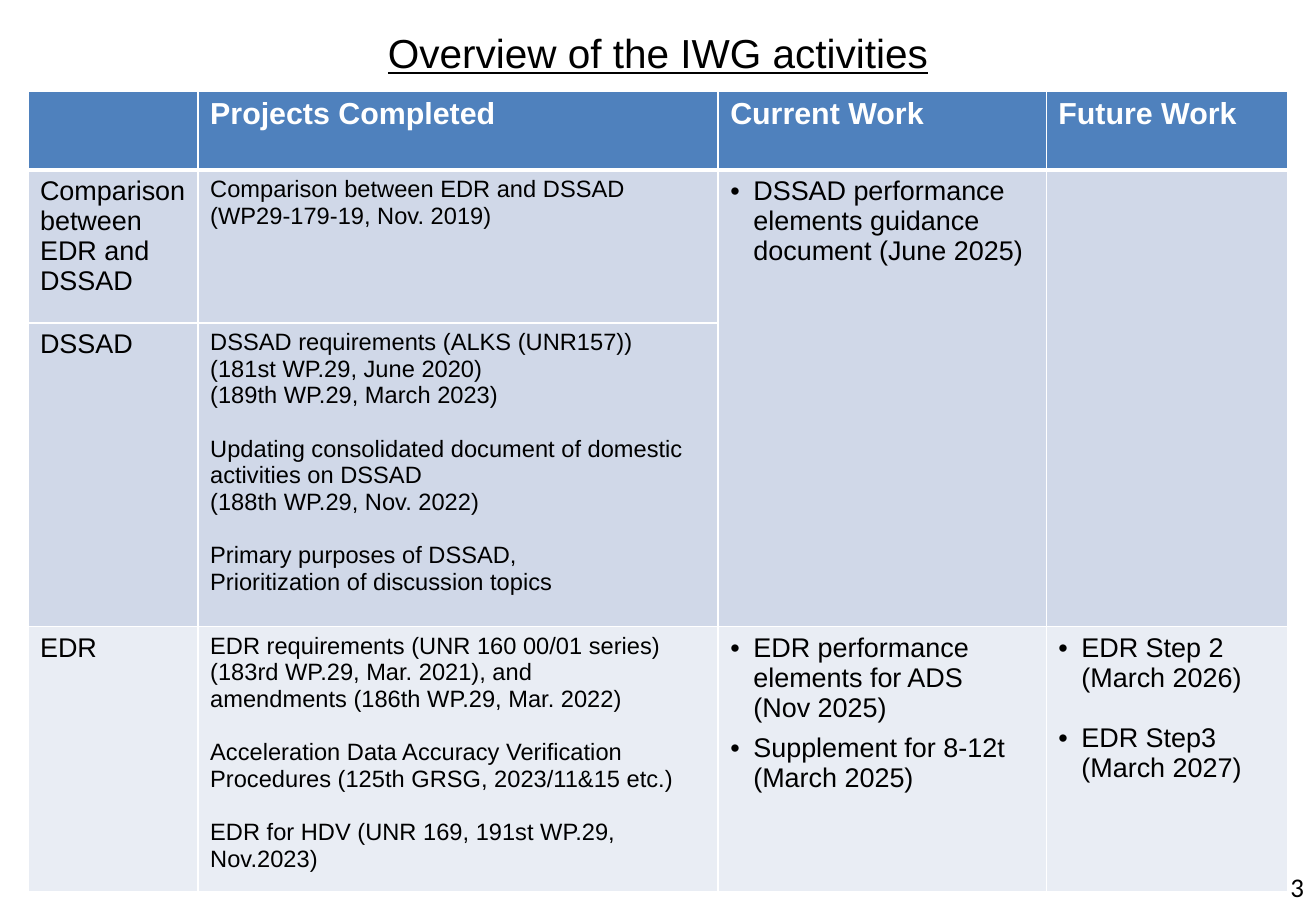
from lxml.etree import SubElement
from pptx import Presentation
from pptx.dml.color import RGBColor
from pptx.enum.text import MSO_ANCHOR, MSO_AUTO_SIZE, PP_ALIGN
from pptx.oxml.ns import qn
from pptx.util import Inches, Pt

WIDTH, HEIGHT = Inches(10.83), Inches(7.5)
COLS = [1.4, 4.28, 2.7, 1.99]
ROWS = [0.65, 1.26, 2.5, 2.12]
BLACK, WHITE, BLUE, MID, PALE = "000000", "FFFFFF", "4F81BD", "D0D8E8", "E9EDF4"
FILLS = [BLUE, MID, MID, PALE]

# Each paragraph is its text and the space before it in points
HEADS = ["", "Projects Completed", "Current Work", "Future Work"]
TOPICS = ["Comparison between EDR and DSSAD", "DSSAD", "EDR"]
DONE = [
    [("Comparison between EDR and DSSAD", 0),
     ("(WP29-179-19, Nov. 2019)", 0)],
    [("DSSAD requirements (ALKS (UNR157))\v(181st WP.29, June 2020)", 0),
     ("(189th WP.29, March 2023)", 0),
     ("Updating consolidated document of domestic activities on DSSAD", 16),
     ("(188th WP.29, Nov. 2022)", 0),
     ("Primary purposes of DSSAD,", 16),
     ("Prioritization of discussion topics", 0)],
    [("EDR requirements (UNR 160 00/01 series) (183rd WP.29, Mar. 2021), and"
      "\vamendments (186th WP.29, Mar. 2022)", 0),
     ("Acceleration Data Accuracy Verification Procedures "
      "(125th GRSG, 2023/11&15 etc.)", 16),
     ("EDR for HDV (UNR 169, 191st WP.29, Nov.2023)", 16)],
]
PLANS = {
    (1, 2): [("DSSAD performance elements guidance document (June 2025)", 0)],
    (3, 2): [("EDR performance elements for ADS\v(Nov 2025)", 0),
             ("Supplement for 8-12t (March 2025)", 6)],
    (3, 3): [("EDR Step 2\v(March 2026)", 0),
             ("EDR Step3\v(March 2027)", 18)],
}


def paint(item, color):
    """Give a fill, line or font one solid hex colour."""
    if hasattr(item, "solid"):
        item.solid()
        item.fore_color.rgb = RGBColor.from_string(color)
    else:
        item.color.rgb = RGBColor.from_string(color)


def style(para, size, color=BLACK, face="Arial", bold=False, line=False):
    for run in para.runs:
        font = run.font
        font.name, font.size, font.bold = face, Pt(size), bold
        font.underline = line
        paint(font, color)


def place(shape, left, top, width, height):
    """Set a shape's box as shares of the slide."""
    shape.left, shape.width = int(WIDTH * left), int(WIDTH * width)
    shape.top, shape.height = int(HEIGHT * top), int(HEIGHT * height)


def bullet(para):
    props = para._p.get_or_add_pPr()
    props.set("marL", str(Inches(0.19)))
    props.set("indent", str(-Inches(0.19)))
    SubElement(props, qn("a:buFont")).set("typeface", "Arial")
    SubElement(props, qn("a:buChar")).set("char", "•")


def write(cell, items, size, color=BLACK, bold=False, dots=False):
    frame = cell.text_frame
    for num, (text, gap) in enumerate(items):
        para = frame.add_paragraph() if num else frame.paragraphs[0]
        para.text = text
        para.space_before = Pt(gap)
        style(para, size, color, bold=bold)
        if dots:
            bullet(para)


def border(cell, head):
    """Draw white cell edges, heavier at the foot of the header."""
    props = cell._tc.get_or_add_tcPr()
    for num, side in enumerate(("lnL", "lnR", "lnT", "lnB")):
        edge = props.makeelement(qn("a:" + side), {})
        edge.set("w", str(Pt(3 if head and side == "lnB" else 1)))
        fill = SubElement(edge, qn("a:solidFill"))
        SubElement(fill, qn("a:srgbClr")).set("val", WHITE)
        props.insert(num, edge)


def add_title(slide):
    title = slide.shapes.title
    place(title, 0.05, 0.027, 0.9, 0.061)
    frame = title.text_frame
    frame.text = "Overview of the IWG activities"
    frame.auto_size = MSO_AUTO_SIZE.NONE
    frame.vertical_anchor = MSO_ANCHOR.MIDDLE
    frame.margin_left = frame.margin_right = 0
    frame.margin_top = frame.margin_bottom = 0
    para = frame.paragraphs[0]
    para.alignment = PP_ALIGN.CENTER
    style(para, 24, line=True)


def add_page(slide):
    box = slide.shapes.add_textbox(0, 0, 0, 0)
    place(box, 0.767, 0.947, 0.233, 0.053)
    frame = box.text_frame
    frame.word_wrap = True
    frame.vertical_anchor = MSO_ANCHOR.MIDDLE
    frame.text = "3"
    para = frame.paragraphs[0]
    para.alignment = PP_ALIGN.RIGHT
    style(para, 16, face="Calibri")


def add_grid(slide):
    table = slide.shapes.add_table(
        len(ROWS), len(COLS), Inches(0.23), Inches(0.75),
        Inches(sum(COLS)), Inches(sum(ROWS))).table
    for col, width in zip(table.columns, COLS):
        col.width = Inches(width)
    for row, height in zip(table.rows, ROWS):
        row.height = Inches(height)

    # Fills and edges
    for row, color in enumerate(FILLS):
        for col in range(len(COLS)):
            cell = table.cell(row, col)
            paint(cell.fill, color)
            border(cell, row == 0)

    # Work columns share one cell for the first two topics
    for col in (2, 3):
        table.cell(1, col).merge(table.cell(2, col))

    # Text
    for col, head in enumerate(HEADS):
        if head:
            write(table.cell(0, col), [(head, 0)], 18, WHITE, bold=True)
    for row, (topic, items) in enumerate(zip(TOPICS, DONE), 1):
        write(table.cell(row, 0), [(topic, 0)], 16)
        write(table.cell(row, 1), items, 14)
    for (row, col), items in PLANS.items():
        write(table.cell(row, col), items, 16, dots=True)


def main():
    deck = Presentation()
    deck.slide_width, deck.slide_height = WIDTH, HEIGHT
    slide = deck.slides.add_slide(deck.slide_layouts[5])
    add_title(slide)
    add_page(slide)
    add_grid(slide)
    deck.save("out.pptx")


if __name__ == "__main__":
    main()
